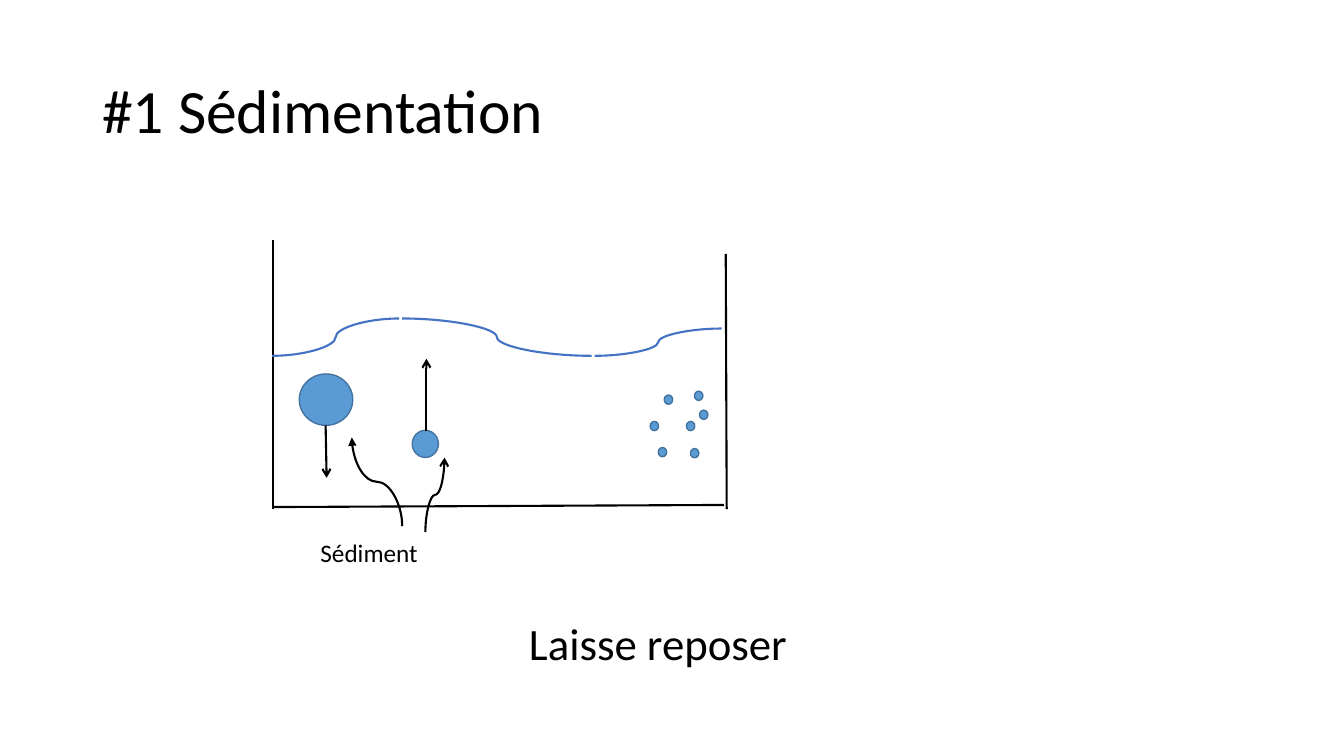
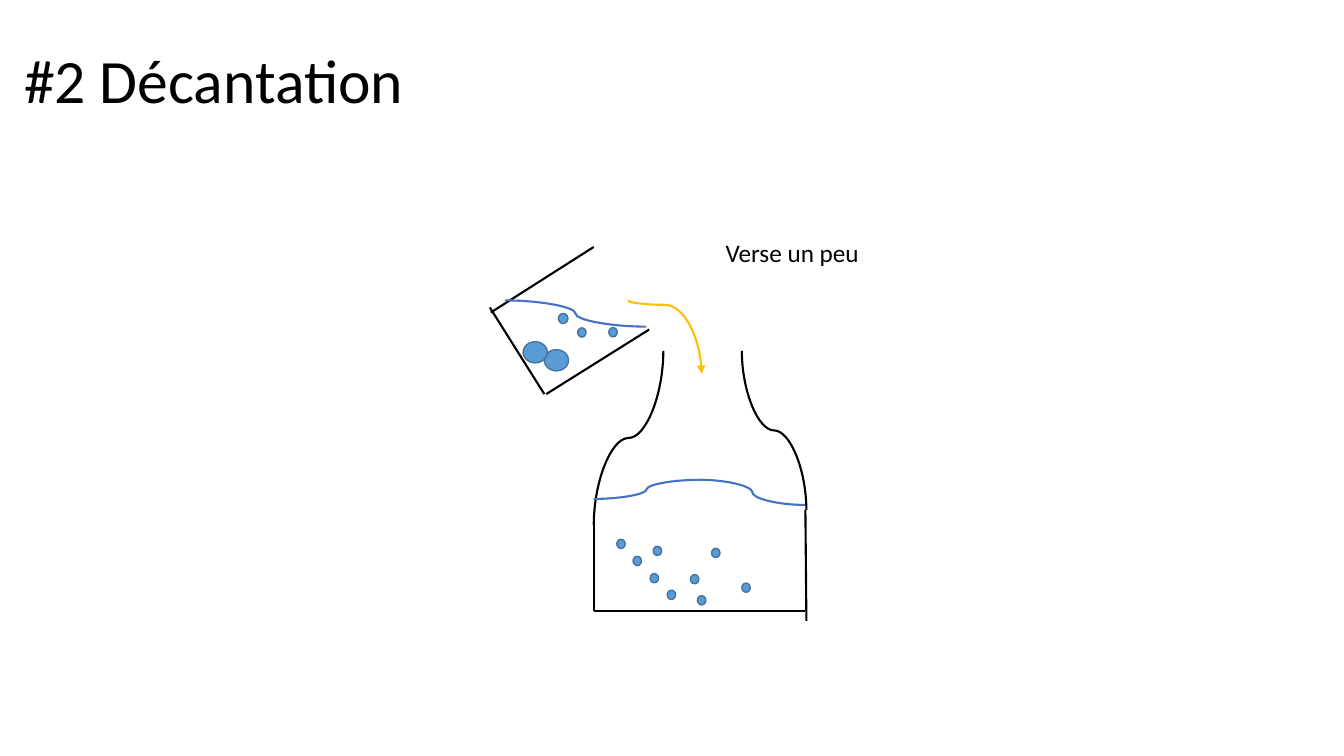
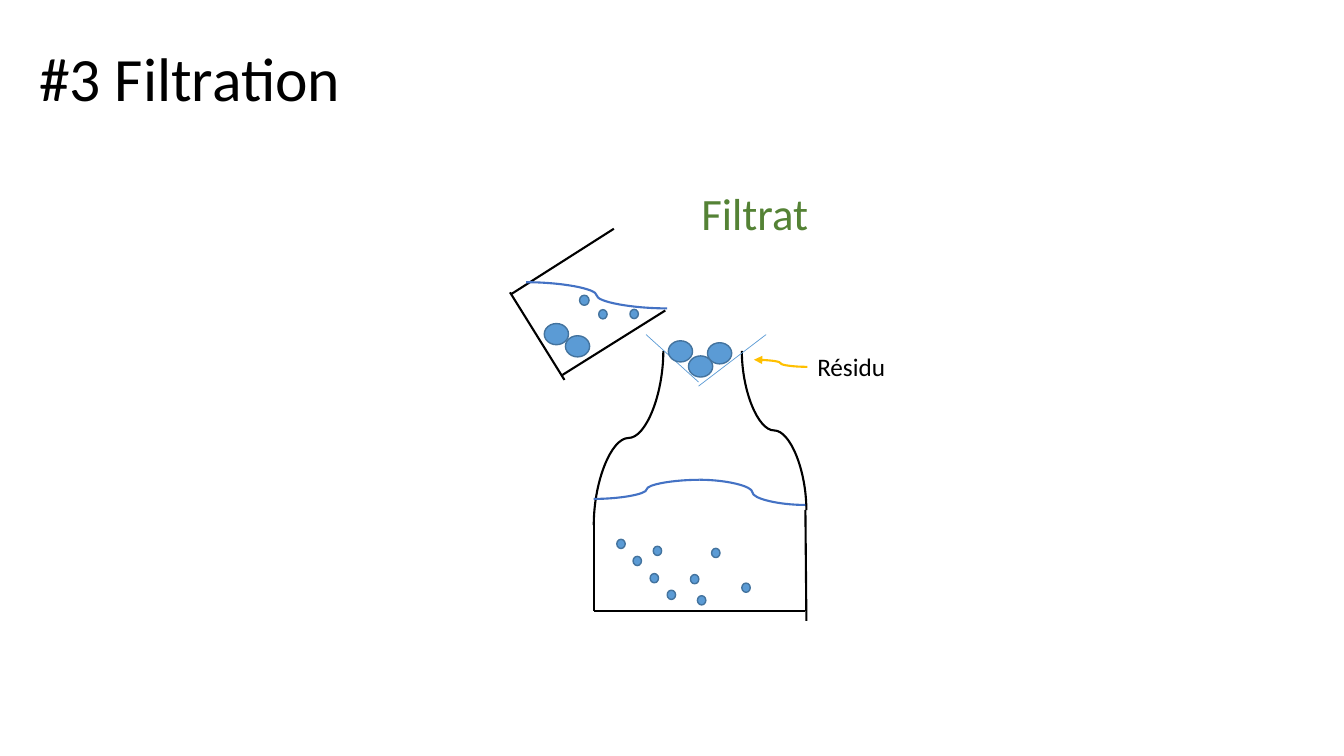
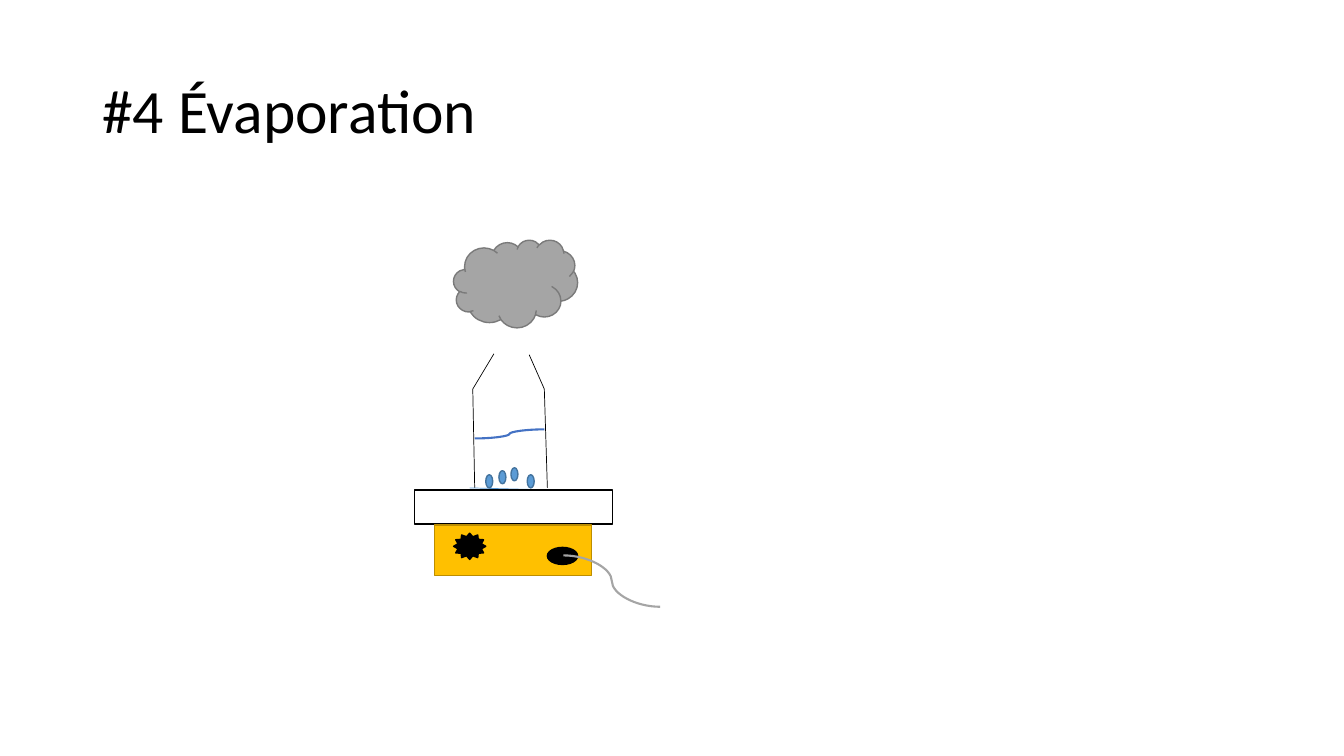
from dataclasses import dataclass

from lxml.etree import SubElement
from pptx import Presentation
from pptx.dml.color import RGBColor as RGB
from pptx.enum.shapes import MSO_CONNECTOR as LINK, MSO_SHAPE as SHAPE
from pptx.enum.text import MSO_ANCHOR as ANCHOR
from pptx.oxml.ns import qn
from pptx.util import Pt


@dataclass(frozen=True)
class Theme:
    """Colours, type sizes, line widths and particle sizes of the deck."""
    font: str = "Calibri"
    black: str = "000000"
    white: str = "FFFFFF"
    water: str = "4472C4"
    grain: str = "5B9BD5"
    grain_edge: str = "43739E"
    gold: str = "FFC000"
    gold_edge: str = "BD8E00"
    grey: str = "A5A5A5"
    grey_edge: str = "7A7A7A"
    green: str = "548235"
    title: int = 44
    large: int = 32
    label: int = 18
    stroke: float = 1.5
    hairline: float = 0.5
    edge: float = 1
    grain_size: tuple = (6, 6.6)
    stone_size: tuple = (17.3, 15.1)
    bubble_size: tuple = (5, 9.4)


T = Theme()


def add_text(s, text, x, y, w, h, size=T.label, color=T.black, spacing=None, anchor=ANCHOR.TOP):
    """Add a text box with one formatted paragraph."""
    tf = s.shapes.add_textbox(Pt(x), Pt(y), Pt(w), Pt(h)).text_frame
    tf.word_wrap = True
    tf.vertical_anchor = anchor
    p = tf.paragraphs[0]
    p.line_spacing = spacing
    r = p.add_run()
    r.text = text
    r.font.name = T.font
    r.font.size = Pt(size)
    r.font.color.rgb = RGB.from_string(color)


def add_slide(prs, title, x=66, y=28.8):
    """Add a blank slide with its title."""
    s = prs.slides.add_slide(prs.slide_layouts[6])
    add_text(s, title, x, y, 828, 104.4, size=T.title, spacing=0.9, anchor=ANCHOR.MIDDLE)
    return s


def add_shape(s, kind, x, y, w, h, fill=T.grain, edge=T.grain_edge):
    """Add a filled and outlined preset shape."""
    sp = s.shapes.add_shape(kind, Pt(x), Pt(y), Pt(w), Pt(h))
    sp.shadow.inherit = False
    sp.fill.solid()
    sp.fill.fore_color.rgb = RGB.from_string(fill)
    sp.line.color.rgb = RGB.from_string(edge)
    sp.line.width = Pt(T.edge)


def add_particles(s, places, size=T.grain_size):
    """Add equal round particles at the given places."""
    for x, y in places:
        add_shape(s, SHAPE.OVAL, x, y, *size)


def add_line(s, x1, y1, x2, y2, color=T.black, width=T.stroke, head=None, kind=LINK.STRAIGHT):
    """Add a connector with an optional arrowhead at its end."""
    c = s.shapes.add_connector(kind, Pt(x1), Pt(y1), Pt(x2), Pt(y2))
    c.line.color.rgb = RGB.from_string(color)
    c.line.width = Pt(width)
    spPr = c._element.spPr
    if head:
        SubElement(spPr.find(qn("a:ln")), qn("a:tailEnd"), type=head)
    SubElement(spPr, qn("a:effectLst"))
    return c


def add_lines(s, ends, **fmt):
    """Add several straight lines in one format."""
    for line in ends:
        add_line(s, *line, **fmt)


def add_curve(s, x1, y1, x2, y2, **fmt):
    """Add an S-curve that leaves and arrives horizontally."""
    return add_line(s, x1, y1, x2, y2, kind=LINK.CURVE, **fmt)


def add_upright_curve(s, x1, y1, x2, y2, bend=None, **fmt):
    """Add an S-curve that leaves and arrives vertically, by a quarter turn."""
    cx, cy = (x1 + x2) / 2, (y1 + y2) / 2
    dx, dy = (x2 - x1) / 2, (y2 - y1) / 2
    turn, sign = (270, -1) if dx * dy > 0 else (90, 1)
    u, v = sign * dy, -sign * dx
    c = add_curve(s, cx - u, cy - v, cx + u, cy + v, **fmt)
    spPr = c._element.spPr
    spPr.find(qn("a:xfrm")).set("rot", str(turn * 60000))
    if bend is not None:
        guides = spPr.find(qn("a:prstGeom")).get_or_add_avLst()
        SubElement(guides, qn("a:gd"), name="adj1", fmla=f"val {round(bend * 100000)}")


def add_waves(s, curves):
    """Add the water surface as a run of curves."""
    for curve in curves:
        add_curve(s, *curve, color=T.water)


def add_bottle(s):
    """Draw the bottle that holds water and fine grains."""
    left, right, floor = 424.1, 575.3, 436.3
    add_upright_curve(s, 529.9, 250.6, 576, 364.3)
    add_upright_curve(s, 473.8, 250.6, left, 375.1)
    add_lines(s, [(left, 375.1, left, floor), (right, 364.3, 576, 443.5),
                  (left, floor, right, floor)])
    add_waves(s, [(left, 356.4, 499.7, 342.7), (right, 360.7, 499.7, 342.7)])
    add_particles(s, [(440.6, 385.2), (452.2, 397.4), (464.4, 409.7), (476.6, 421.6),
                      (466.6, 390.2), (508.3, 391.7), (493.2, 410.4), (498.2, 425.5),
                      (529.9, 416.5)])


def add_beaker(s, x, y, walls, stones):
    """Draw the tilted beaker, its water starting at x, y."""
    add_lines(s, walls)
    add_waves(s, [(x, y, x + 100.8, y + 18.7)])
    add_particles(s, [(x + 38.2, y + 9.3)], size=(6.8, 7.2))
    add_particles(s, [(x + 51.9, y + 19.6), (x + 74.2, y + 19.4)])
    add_particles(s, stones, size=T.stone_size)


def sedimentation(prs):
    """Build the settling tank slide."""
    s = add_slide(prs, "#1 Sédimentation")
    add_lines(s, [(195.1, 171.4, 195.1, 363.6), (195.1, 362.2, 517, 360.7),
                  (519.1, 363.6, 518.4, 181.4)])
    add_waves(s, [(194.4, 254.2, 285.1, 227.5), (287.3, 227.5, 422.6, 254.2),
                  (424.8, 254.2, 515.5, 234.7)])
    add_particles(s, [(474.5, 282.2), (490.3, 301), (464.4, 301), (470.2, 319.7),
                      (496.1, 279.4), (499.7, 293), (493.2, 320.4)])
    add_particles(s, [(213.8, 267.1)], size=(38.2, 36.7))
    add_particles(s, [(294.5, 307.4)], size=(18.7, 19.4))
    add_lines(s, [(232.6, 303.8, 233.3, 341.3), (304.6, 308.2, 304.6, 256.3)], head="arrow")
    add_text(s, "Sédiment", 221.8, 380.2, 183.6, 28.8)
    add_upright_curve(s, 287.3, 375.8, 251.3, 312.5, head="triangle")
    add_upright_curve(s, 303.8, 380.2, 317.5, 326.9, head="arrow")
    add_text(s, "Laisse reposer", 370.8, 436.3, 239.8, 46.1, size=T.large)


def decantation(prs):
    """Build the pouring slide."""
    s = add_slide(prs, "#2 Décantation", 10.1, 7.2)
    add_bottle(s)
    add_beaker(s, 360.7, 214.6,
               walls=[(424.1, 176.4, 350.6, 223.2), (463.7, 235.4, 390.2, 281.5),
                      (388.8, 281.5, 349.9, 219.6)],
               stones=[(388.8, 249.8), (373.7, 244.1)])
    add_upright_curve(s, 448.6, 214.6, 501.1, 267.1, bend=0.06, color=T.gold, head="triangle")
    add_text(s, "Verse un peu", 511.2, 166.3, 129.6, 28.8)


def filtration(prs):
    """Build the filter slide."""
    s = add_slide(prs, "#3 Filtration", 20.9, 5.8)
    add_bottle(s)
    add_beaker(s, 375.8, 201.6,
               walls=[(438.5, 163.4, 365, 210.2), (475.2, 221.8, 401.8, 267.8),
                      (403.2, 271.4, 364.3, 208.8)],
               stones=[(403.9, 239.8), (388.8, 231.1)])
    add_lines(s, [(461.5, 239, 499, 272.9), (547.2, 239, 499, 275.8)],
              color=T.grain, width=T.hairline)
    add_particles(s, [(505.4, 244.8), (477.4, 243.4), (491.8, 254.2)], size=T.stone_size)
    add_text(s, "Résidu", 576.7, 247.7, 262.1, 28.8)
    add_curve(s, 576.7, 262.1, 538.6, 257, color=T.gold, head="triangle")
    add_text(s, "Filtrat", 493.9, 128.9, 324, 46.1, size=T.large, color=T.green)


def evaporation(prs):
    """Build the hot plate slide."""
    s = add_slide(prs, "#4 Évaporation")
    add_lines(s, [(337.7, 277.9, 339.1, 348.5), (388.8, 277.9, 391, 348.5),
                  (337.7, 277.9, 352.8, 252.7), (388.8, 277.9, 378, 253.4)], width=T.hairline)
    add_line(s, 335.5, 348.5, 391, 349.9, color=T.grain, width=T.hairline)
    add_shape(s, SHAPE.RECTANGLE, 295.9, 349.9, 141.8, 24.5, T.white, T.black)
    add_shape(s, SHAPE.RECTANGLE, 310.3, 375.1, 112.3, 36, T.gold, T.gold_edge)
    add_shape(s, SHAPE.OVAL, 391, 391, 21.6, 12.2, T.black, T.black)
    add_curve(s, 402.5, 396.7, 471.6, 433.4, color=T.grey)
    add_shape(s, SHAPE.STAR_12_POINT, 324, 380.9, 23, 18.7, T.black, T.black)
    add_waves(s, [(339.1, 313.2, 388.8, 306.7)])
    add_shape(s, SHAPE.CLOUD, 324, 171.4, 88.6, 62.6, T.grey, T.grey_edge)
    add_particles(s, [(347, 339.1), (356.4, 336.2), (365, 334.1), (376.6, 339.1)],
                  size=T.bubble_size)


def main():
    """Build and save the deck."""
    prs = Presentation()
    prs.slide_width, prs.slide_height = Pt(960), Pt(540)
    for build in (sedimentation, decantation, filtration, evaporation):
        build(prs)
    prs.save("out.pptx")


if __name__ == "__main__":
    main()
